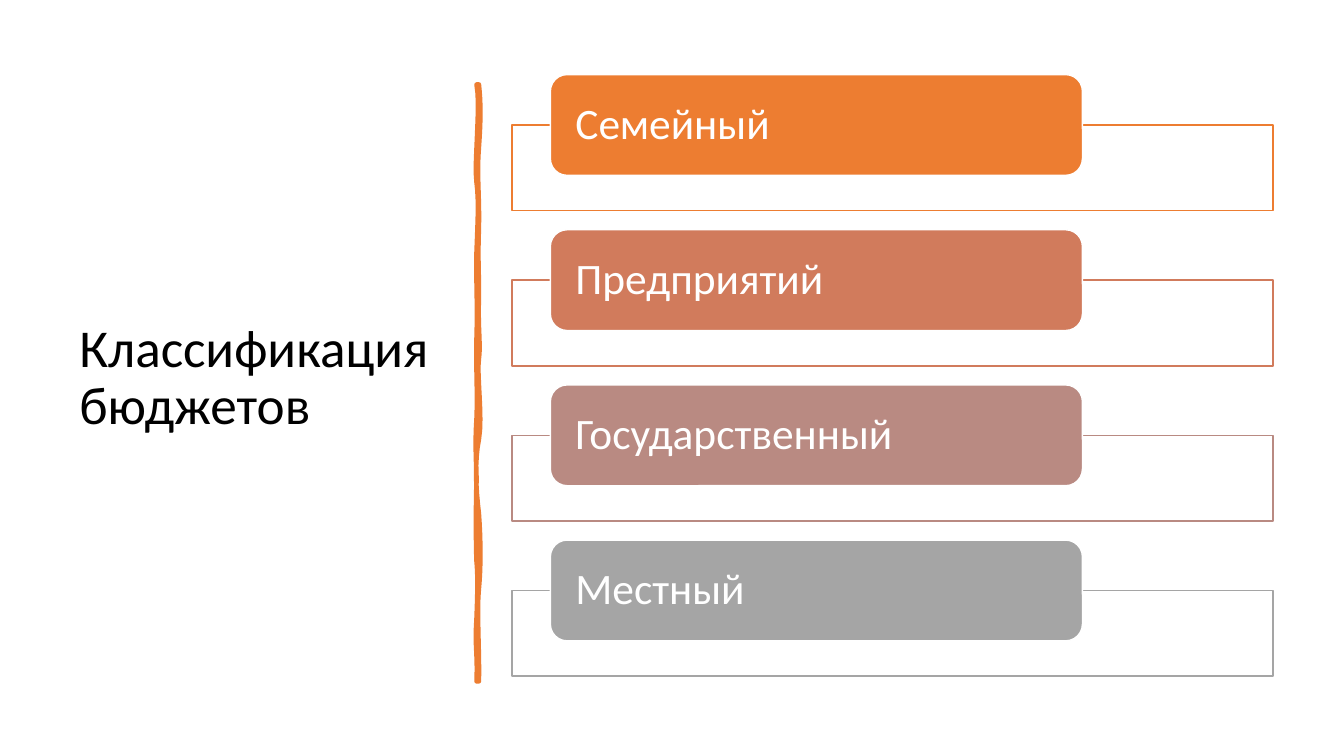
from dataclasses import dataclass
from typing import NamedTuple

from lxml import etree
from pptx import Presentation
from pptx import util as u
from pptx.dml.color import RGBColor
from pptx.enum import shapes, text
from pptx.oxml import ns


@dataclass(frozen=True)
class Theme:
    font: str = "Calibri"
    title_size: float = 38
    label_size: float = 31
    outline: float = 1
    brush: float = 3.25
    line_spacing: float = 0.9
    ink: str = "000000"
    paper: str = "FFFFFF"
    accent: str = "ED7D31"


class Budget(NamedTuple):
    label: str
    color: str


class Box(NamedTuple):
    left: float
    top: float
    width: float
    height: float

    def lowered(self, distance: float) -> "Box":
        return self._replace(top=self.top + distance)

    def emu(self) -> list[u.Cm]:
        return [u.Cm(length) for length in self]


class Wave(NamedTuple):
    """One Bezier piece of a brush edge: sideways bends, heights, end height."""
    bend1: float
    y1: float
    bend2: float
    y2: float
    end: float


THEME = Theme()
BUDGETS = [
    Budget("Семейный", THEME.accent),
    Budget("Предприятий", "D17B5C"),
    Budget("Государственный", "B98A82"),
    Budget("Местный", "A5A5A5"),
]
TITLE_BOX = Box(1.75, 1.78, 9.5, 15.52)
FRAME_BOX = Box(12.9, 3.15, 19.18, 2.16)
LABEL_BOX = Box(13.87, 1.88, 13.41, 2.54)
ROW_PITCH = 3.91

BRUSH_TOP, BRUSH_BOTTOM = 2.13, 17.17
BRUSH_LEFT, BRUSH_RIGHT = 12.01, 12.07
RIGHT_EDGE = [
    Wave(0.05, 2.59, 0.05, 3.02, 3.71),
    Wave(-0.06, 4.39, 0.02, 4.95, 5.74),
    Wave(-0.03, 6.53, 0, 6.65, 7.47),
    Wave(-0.03, 8.26, 0.05, 8.69, 9.04),
    Wave(-0.06, 9.4, 0.1, 10.52, 11.07),
    Wave(-0.11, 11.61, -0.08, 12.29, 12.95),
    Wave(0.05, 13.61, 0.05, 14.33, 14.83),
    Wave(-0.06, 15.32, 0.02, 16.51, BRUSH_BOTTOM),
]
LEFT_EDGE = [
    Wave(0.03, 16.41, -0.05, 16.36, 15.57),
    Wave(0.03, 14.81, 0.03, 14.48, 14.15),
    Wave(-0.02, 13.82, -0.02, 12.57, 12.12),
    Wave(0, 11.66, -0.05, 11.3, 10.54),
    Wave(0.03, 9.8, -0.02, 9.47, 8.51),
    Wave(0.03, 7.57, -0.02, 7.14, 6.35),
    Wave(0.03, 5.54, 0.06, 5.08, 4.6),
    Wave(-0.07, 4.14, 0.11, 2.64, BRUSH_TOP),
]


def edge_points(x: float, start: float, waves: list[Wave], steps: int = 8) -> list[tuple[u.Cm, u.Cm]]:
    """Sample the Bezier pieces of an edge that runs along the vertical at x."""
    points = [(u.Cm(x), u.Cm(start))]
    for wave in waves:
        for step in range(1, steps + 1):
            t = step / steps
            s = 1 - t
            pull1, pull2 = 3 * s * s * t, 3 * s * t * t
            y = s**3 * start + pull1 * wave.y1 + pull2 * wave.y2 + t**3 * wave.end
            points.append((u.Cm(x + pull1 * wave.bend1 + pull2 * wave.bend2), u.Cm(y)))
        start = wave.end
    return points


def paint(shape, fill: str, line: str, width: float) -> None:
    shape.shadow.inherit = False
    shape.fill.solid()
    shape.fill.fore_color.rgb = RGBColor.from_string(fill)
    shape.line.color.rgb = RGBColor.from_string(line)
    shape.line.width = u.Pt(width)


def write(shape, words: str, size: float, color: str, inset_x: float, inset_y: float) -> None:
    frame = shape.text_frame
    frame.word_wrap = True
    frame.vertical_anchor = text.MSO_ANCHOR.MIDDLE
    frame.margin_left = frame.margin_right = u.Cm(inset_x)
    frame.margin_top = frame.margin_bottom = u.Cm(inset_y)
    paragraph = frame.paragraphs[0]
    paragraph.alignment = text.PP_ALIGN.LEFT
    paragraph.line_spacing = THEME.line_spacing
    run = paragraph.add_run()
    run.text = words
    run.font.name = THEME.font
    run.font.size = u.Pt(size)
    run.font.color.rgb = RGBColor.from_string(color)


def add_title(slide) -> None:
    title = slide.shapes.add_textbox(*TITLE_BOX.emu())
    write(title, "Классификация бюджетов", THEME.title_size, THEME.ink, 0.25, 0.13)


def add_brush_stroke(slide) -> None:
    outline = edge_points(BRUSH_RIGHT, BRUSH_TOP, RIGHT_EDGE)
    outline += edge_points(BRUSH_LEFT, BRUSH_BOTTOM, LEFT_EDGE)
    builder = slide.shapes.build_freeform(*outline[0])
    builder.add_line_segments(outline[1:], close=True)
    brush = builder.convert_to_shape()
    paint(brush, THEME.accent, THEME.accent, THEME.brush)
    etree.SubElement(brush.line._get_or_add_ln(), ns.qn("a:round"))


def add_budget(slide, budget: Budget, row: int) -> None:
    drop = row * ROW_PITCH
    frame = slide.shapes.add_shape(shapes.MSO_SHAPE.RECTANGLE, *FRAME_BOX.lowered(drop).emu())
    paint(frame, THEME.paper, budget.color, THEME.outline)
    fill_color = frame.fill._xPr.find(ns.qn("a:solidFill"))[0]
    etree.SubElement(fill_color, ns.qn("a:alpha"), val="90000")

    label = slide.shapes.add_shape(shapes.MSO_SHAPE.ROUNDED_RECTANGLE, *LABEL_BOX.lowered(drop).emu())
    paint(label, budget.color, THEME.paper, THEME.outline)
    write(label, budget.label, THEME.label_size, THEME.paper, 0.51, 0)


def main() -> None:
    deck = Presentation()
    deck.slide_width, deck.slide_height = u.Cm(33.87), u.Cm(19.05)
    slide = deck.slides.add_slide(deck.slide_layouts[6])
    add_title(slide)
    add_brush_stroke(slide)
    for row, budget in enumerate(BUDGETS):
        add_budget(slide, budget, row)
    deck.save("out.pptx")


if __name__ == "__main__":
    main()
